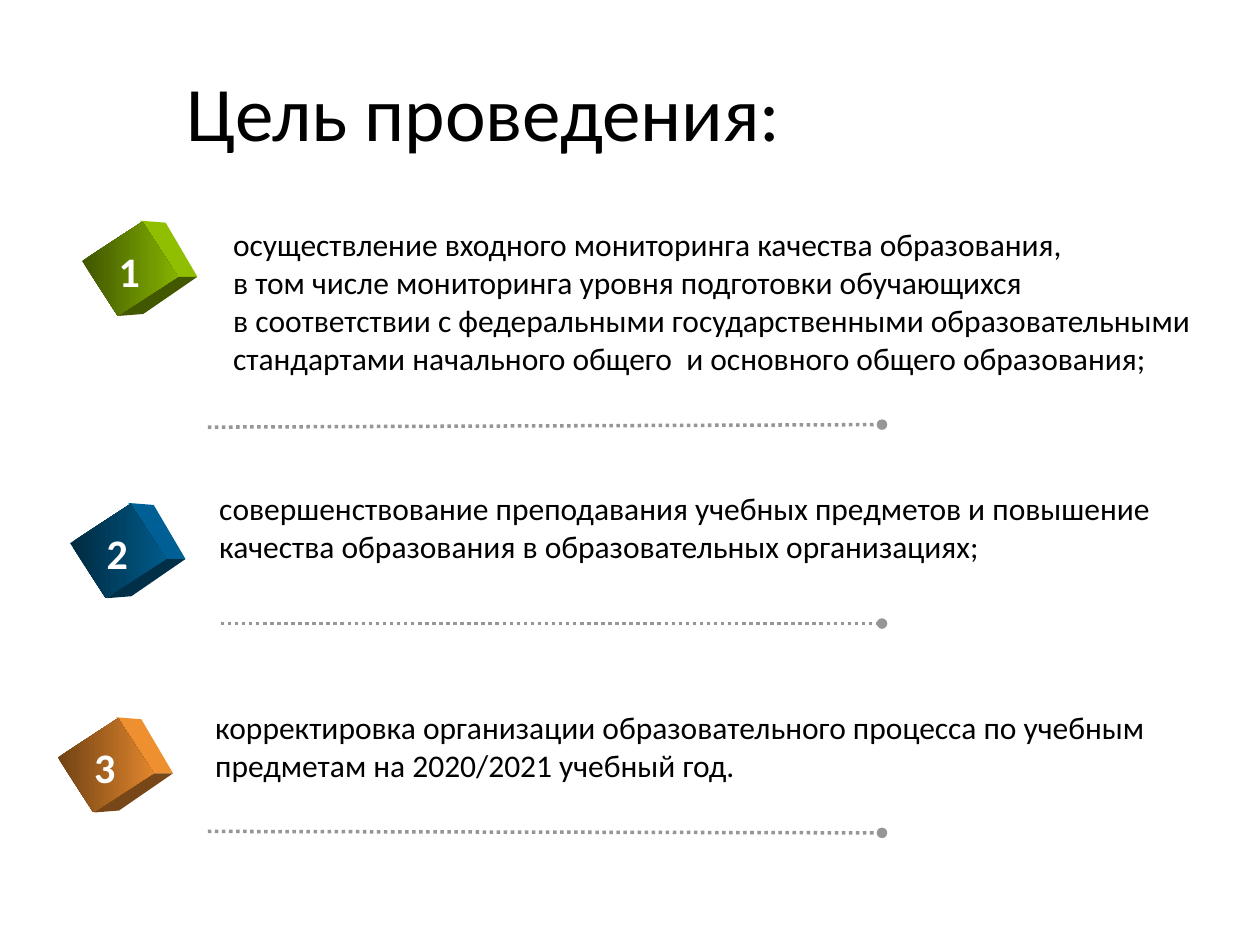
from lxml import etree
from pptx import Presentation
from pptx import util as u
from pptx.dml.color import RGBColor
from pptx.enum import dml, shapes, text
from pptx.oxml.ns import qn

TITLE = "Цель проведения:"
GOALS = [
    {
        "lines": [
            "осуществление входного мониторинга качества образования,",
            "в том числе мониторинга уровня подготовки обучающихся",
            "в соответствии с федеральными государственными образовательными",
            "стандартами начального общего  и основного общего образования;",
        ],
        "palette": "green",
        "cube": (2.62, 5.42),
        "text": (4.45, 4.42, 20.4, 3.33),
        "rule": (4.19, 8.61, 17.78, 8.56),
    },
    {
        "lines": [
            "совершенствование преподавания учебных предметов и повышение",
            "качества образования в образовательных организациях;",
        ],
        "palette": "blue",
        "cube": (2.38, 11.11),
        "text": (4.17, 9.73, 19.61, 1.8),
        "rule": (4.45, 12.57, 17.78, 12.57),
    },
    {
        "lines": [
            "корректировка организации образовательного процесса по учебным",
            "предметам на 2020/2021 учебный год.",
        ],
        "palette": "orange",
        "cube": (2.13, 15.43),
        "text": (4.09, 14.15, 19.69, 1.8),
        "rule": (4.19, 16.76, 17.78, 16.79),
    },
]

THEME = {
    "font": "Calibri",
    "title": {"size": 44, "color": "000000", "bold": False},
    "body": {"size": 18, "color": "000000", "bold": False},
    "number": {"size": 24, "color": "FFFFFF", "bold": True},
    "rule": "969696",
    "green": {"dark": "3F5500", "front": "85B200", "side": "8FBF00", "base": "425800"},
    "blue": {"dark": "002A40", "front": "005A88", "side": "006096", "base": "002F47"},
    "orange": {"dark": "704214", "front": "E0852C", "side": "EE9030", "base": "774718"},
}

FRONT_SIZE = (1.32, 1.45)
FRONT_ROTATION = 57
CUBE_FACES = {
    "side": [(0.21, -0.97), (0.72, -0.93), (1.36, 0.16), (0.9, 0.16)],
    "base": [(-0.23, 0.95), (0.9, 0.16), (1.36, 0.16), (0.27, 0.91)],
}
NUMBER_BOX = (-0.48, -0.6, 1, 1.27)


def lengths(*values):
    return [u.Cm(value) for value in values]


def add_text(slide, box, lines, style, wrap=False, **frame_format):
    frame = slide.shapes.add_textbox(*lengths(*box)).text_frame
    for name, value in {"word_wrap": wrap, **frame_format}.items():
        setattr(frame, name, value)
    for index, line in enumerate(lines):
        paragraph = frame.paragraphs[0] if index == 0 else frame.add_paragraph()
        run = paragraph.add_run()
        run.text = line
        font_format = {
            "name": THEME["font"],
            "size": u.Pt(style["size"]),
            "bold": style["bold"],
        }
        for name, value in font_format.items():
            setattr(run.font, name, value)
        run.font.color.rgb = RGBColor.from_string(style["color"])
    return frame


def add_cube(slide, center, palette):
    center_x, center_y = center
    for face, points in CUBE_FACES.items():
        corners = [lengths(center_x + x, center_y + y) for x, y in points]
        builder = slide.shapes.build_freeform(*corners[0])
        builder.add_line_segments(corners[1:], close=True)
        shape = builder.convert_to_shape()
        shape.shadow.inherit = False
        shape.fill.solid()
        shape.fill.fore_color.rgb = RGBColor.from_string(palette[face])
        shape.line.fill.background()

    width, height = FRONT_SIZE
    front = slide.shapes.add_shape(
        shapes.MSO_SHAPE.RECTANGLE,
        *lengths(center_x - width / 2, center_y - height / 2, width, height),
    )
    front.rotation = FRONT_ROTATION
    front.shadow.inherit = False
    front.line.fill.background()
    front.fill.gradient()
    front.fill.gradient_angle = FRONT_ROTATION
    for stop, shade in zip(front.fill.gradient_stops, ("dark", "front")):
        stop.color.rgb = RGBColor.from_string(palette[shade])


def add_rule(slide, ends):
    connector = slide.shapes.add_connector(
        shapes.MSO_CONNECTOR.STRAIGHT, *lengths(*ends)
    )
    connector.line.color.rgb = RGBColor.from_string(THEME["rule"])
    connector.line.width = u.Pt(2)
    connector.line.dash_style = dml.MSO_LINE.ROUND_DOT
    properties = connector.line._get_or_add_ln()
    etree.SubElement(properties, qn("a:tailEnd"), type="oval")
    etree.SubElement(connector._element.spPr, qn("a:effectLst"))


def main():
    presentation = Presentation()
    presentation.slide_width, presentation.slide_height = lengths(25.4, 19.05)
    slide = presentation.slides.add_slide(presentation.slide_layouts[6])

    title = add_text(
        slide, (3.51, 1.12, 21.89, 2.46), [TITLE], THEME["title"], wrap=True,
        vertical_anchor=text.MSO_ANCHOR.MIDDLE,
    )
    title.paragraphs[0].line_spacing = 0.9

    for number, goal in enumerate(GOALS, start=1):
        add_rule(slide, goal["rule"])
        add_cube(slide, goal["cube"], THEME[goal["palette"]])
        add_text(slide, goal["text"], goal["lines"], THEME["body"])
        x, y = goal["cube"]
        left, top, width, height = NUMBER_BOX
        add_text(
            slide, (x + left, y + top, width, height), [str(number)], THEME["number"]
        )

    presentation.save("out.pptx")


if __name__ == "__main__":
    main()
